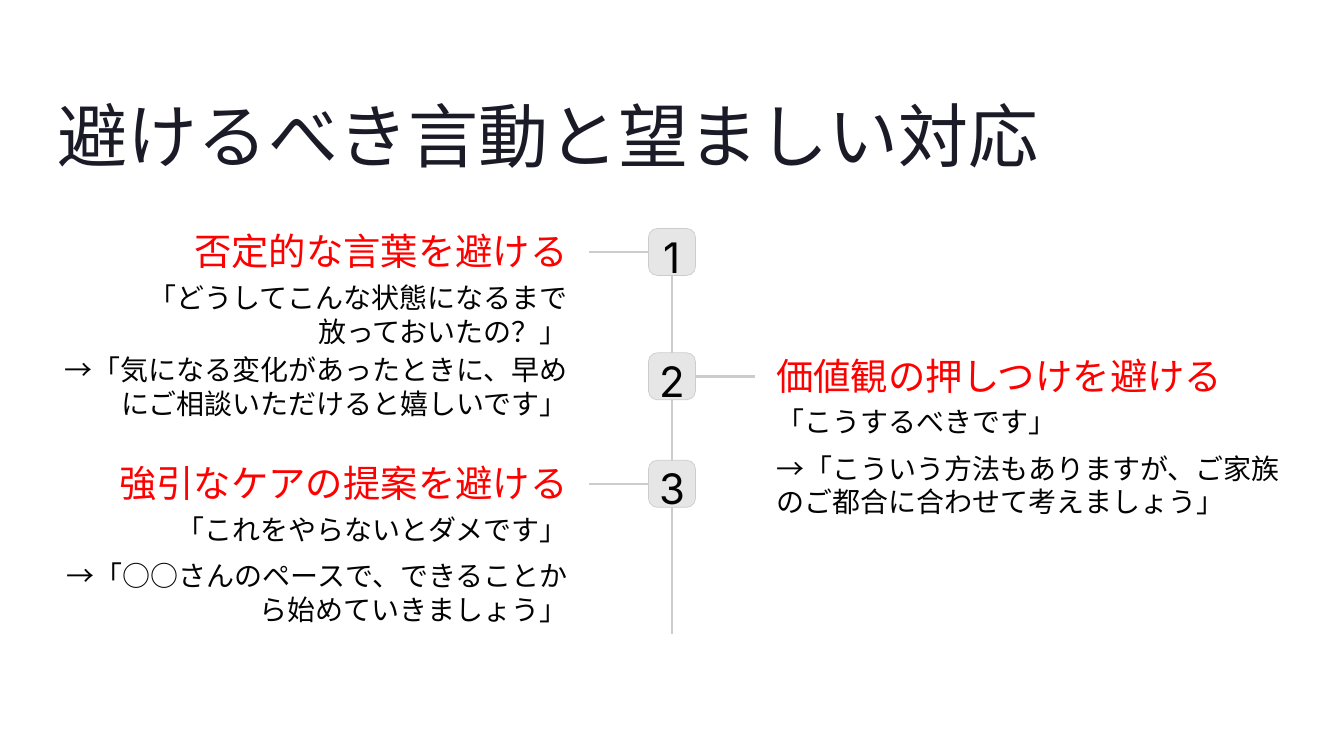
import pptx
import pptx.util
import pptx.dml.color
import pptx.enum.shapes
import pptx.enum.text
import pptx.oxml.ns
import lxml.etree

ALIGN = pptx.enum.text.PP_ALIGN
SHAPE = pptx.enum.shapes.MSO_SHAPE
COLS, ROWS = 160, 90


def color(text):
    return pptx.dml.color.RGBColor.from_string(text)


class Deck:
    head, body = "Inter", "Karla"
    ink, title_ink, red = "030303", "1B1B27", "FF0000"
    gray, pale = "CCCCCC", "E6E6E6"

    def __init__(self):
        self.file = pptx.Presentation()
        self.file.slide_width = pptx.util.Inches(16)
        self.file.slide_height = pptx.util.Inches(9)
        self.slide = self.file.slides.add_slide(self.file.slide_layouts[5])

    def x(self, cols):
        return round(self.file.slide_width * cols / COLS)

    def y(self, rows):
        return round(self.file.slide_height * rows / ROWS)

    def box(self, left, top, width, height):
        return self.x(left), self.y(top), self.x(width), self.y(height)

    def fill_text(self, shape, lines, size, font, ink, align, pitch=None):
        frame = shape.text_frame
        frame.auto_size = pptx.enum.text.MSO_AUTO_SIZE.NONE
        frame.word_wrap = True
        frame.vertical_anchor = pptx.enum.text.MSO_ANCHOR.TOP
        frame.margin_left = frame.margin_right = 0
        frame.margin_top = frame.margin_bottom = 0
        for i, line in enumerate(lines):
            para = frame.add_paragraph() if i else frame.paragraphs[0]
            para.alignment = align
            if pitch:
                para.line_spacing = pptx.util.Pt(pitch)
            run = para.add_run()
            run.text = line
            run.font.size = pptx.util.Pt(size)
            run.font.name = font
            run.font.color.rgb = color(ink)

    def title(self, text, *place):
        shape = self.slide.shapes.title
        shape.left, shape.top, shape.width, shape.height = self.box(*place)
        self.fill_text(shape, [text], 60, self.head, self.title_ink, ALIGN.LEFT, 55.5)

    def text(self, place, lines, size, font, ink, align):
        shape = self.slide.shapes.add_textbox(*self.box(*place))
        self.fill_text(shape, lines, size, font, ink, align)

    def badge(self, label, left, top, side):
        shape = self.slide.shapes.add_shape(
            SHAPE.ROUNDED_RECTANGLE, *self.box(left, top, side, side))
        shape.adjustments[0] = 0.19
        shape.shadow.inherit = False
        shape.fill.solid()
        shape.fill.fore_color.rgb = color(self.pale)
        shape.line.color.rgb = color(self.gray)
        shape.line.width = pptx.util.Pt(0.6)
        self.fill_text(shape, [label], 36, self.head, self.ink, ALIGN.CENTER)
        return shape

    def line(self, x1, y1, x2, y2):
        link = self.slide.shapes.add_connector(
            pptx.enum.shapes.MSO_CONNECTOR.STRAIGHT,
            self.x(x1), self.y(y1), self.x(x2), self.y(y2))
        link.line.color.rgb = color(self.gray)
        link.line.width = pptx.util.Pt(2.2)
        lxml.etree.SubElement(link._element.spPr, pptx.oxml.ns.qn("a:effectLst"))
        return link


# Each step: top row, on the left side, heading, quote lines, better reply
STEPS = [
    (27.2, True, "否定的な言葉を避ける",
     ["「どうしてこんな状態になるまで", "放っておいたの？」"],
     "→「気になる変化があったときに、早めにご相談いただけると嬉しいです」"),
    (42, False, "価値観の押しつけを避ける",
     ["「こうするべきです」"],
     "→「こういう方法もありますが、ご家族のご都合に合わせて考えましょう」"),
    (54.8, True, "強引なケアの提案を避ける",
     ["「これをやらないとダメです」"],
     "→「○○さんのペースで、できることから始めていきましょう」"),
]
MID, SIDE, ARM, WIDE = COLS / 2, 5.6, 7.1, 60.7


def main():
    deck = Deck()
    deck.title("避けるべき言動と望ましい対応", 6.9, 13.3, 146, 7.7)

    # Spine of the timeline
    deck.line(MID, 27.2, MID, 75.5)

    for num, (top, left, head, quote, reply) in enumerate(STEPS, 1):
        # Numbered badge and its arm
        badge = deck.badge(str(num), MID - SIDE / 2, top, SIDE)
        sign = -1 if left else 1
        edge, mid = MID + sign * SIDE / 2, top + SIDE / 2
        arm = deck.line(edge + sign * ARM, mid, edge, mid)
        arm.end_connect(badge, 1 if left else 3)

        # Heading, words to avoid, better words
        start = 6.9 if left else 92.4
        align = ALIGN.RIGHT if left else ALIGN.LEFT
        deck.text((start, top, WIDE, 3.9), [head], 32, deck.head, deck.red, align)
        low = top + 6.2
        deck.text((start, low, WIDE, 4), quote, 24, deck.body, deck.ink, align)
        low += 5.5 + 3.1 * (len(quote) - 1)
        deck.text((start, low, WIDE, 7.9), [reply], 24, deck.body, deck.ink, align)

    deck.file.save("out.pptx")


if __name__ == "__main__":
    main()
